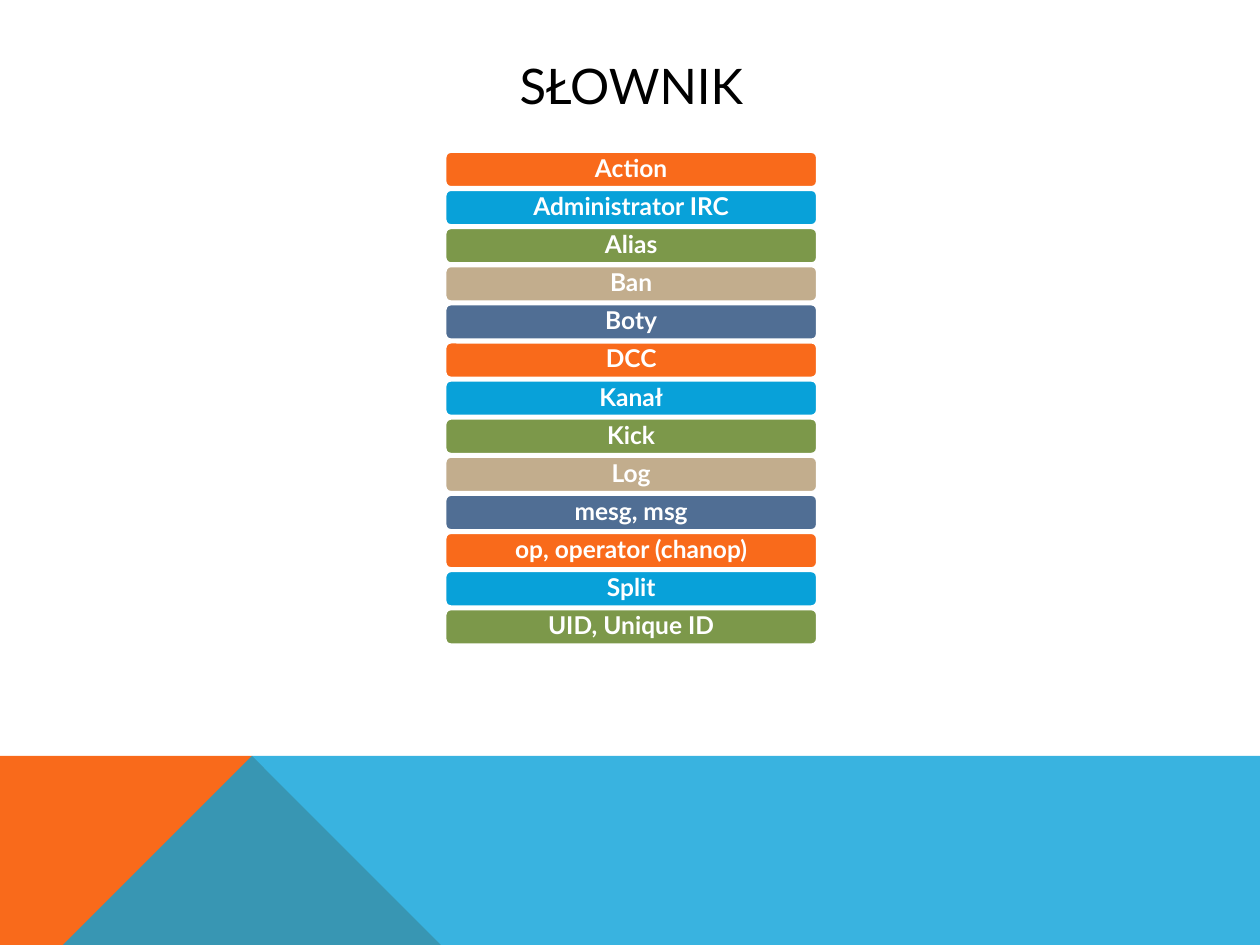
from dataclasses import dataclass

from lxml.etree import SubElement
from pptx import Presentation
from pptx.dml.color import RGBColor
from pptx.enum.shapes import MSO_SHAPE as Preset
from pptx.enum.text import MSO_ANCHOR as Anchor, PP_ALIGN as Align
from pptx.oxml.ns import qn
from pptx.shapes.group import GroupShape
from pptx.slide import Slide
from pptx.text.text import TextFrame
from pptx.util import Inches, Pt

FONT = "Lato"
BLACK = RGBColor(0x00, 0x00, 0x00)
WHITE = RGBColor(0xFF, 0xFF, 0xFF)
ORANGE = RGBColor(0xF9, 0x6A, 0x1B)
BLUE = RGBColor(0x08, 0xA1, 0xD9)
GREEN = RGBColor(0x7C, 0x98, 0x4A)
SAND = RGBColor(0xC2, 0xAD, 0x8D)
SLATE = RGBColor(0x50, 0x6E, 0x94)
BAR_COLORS = (ORANGE, BLUE, GREEN, SAND, SLATE)

WIDTH, HEIGHT = 10, 7.5
BAND_TOP, PEAK = 5.52, 2.23
FIRST_TOP, LAST_TOP = 1.2, 4.83
TERMS = (
    "Action", "Administrator IRC", "Alias", "Ban", "Boty", "DCC", "Kanał",
    "Kick", "Log", "mesg, msg", "op, operator (chanop)", "Split",
    "UID, Unique ID",
)


@dataclass(frozen=True)
class Band:
    points: tuple[tuple[float, float], ...]
    color: RGBColor
    opacity: int = 100


@dataclass(frozen=True)
class Bar:
    term: str
    top: float
    color: RGBColor


BANDS = (
    Band(((0, HEIGHT), (0, BAND_TOP), (PEAK, BAND_TOP), (3.91, HEIGHT)), ORANGE),
    Band(((0, HEIGHT), (PEAK, BAND_TOP), (WIDTH, BAND_TOP), (WIDTH, HEIGHT)), BLUE, 80),
)


def write_text(frame: TextFrame, text: str, size: int, color: RGBColor, bold: bool) -> None:
    frame.word_wrap = True
    frame.vertical_anchor = Anchor.MIDDLE
    para = frame.paragraphs[0]
    para.alignment = Align.CENTER
    para.line_spacing = 0.9
    span = para.add_run()
    span.text = text
    span.font.name = FONT
    span.font.size = Pt(size)
    span.font.bold = bold
    span.font.color.rgb = color


def draw_band(page: Slide, band: Band) -> None:
    start, *others = band.points
    builder = page.shapes.build_freeform(*start, scale=Inches(1))
    builder.add_line_segments(others, close=True)
    shape = builder.convert_to_shape()
    shape.shadow.inherit = False
    shape.fill.solid()
    shape.fill.fore_color.rgb = band.color
    shape.line.fill.background()
    if band.opacity < 100:
        color = shape.element.spPr.find(qn("a:solidFill")).find(qn("a:srgbClr"))
        SubElement(color, qn("a:alpha"), val=str(band.opacity * 1000))


def draw_bar(group: GroupShape, bar: Bar) -> None:
    box = group.shapes.add_shape(
        Preset.ROUNDED_RECTANGLE, Inches(3.53), Inches(bar.top), Inches(2.96), Inches(0.29)
    )
    box.shadow.inherit = False
    box.fill.solid()
    box.fill.fore_color.rgb = bar.color
    box.line.color.rgb = WHITE
    box.line.width = Pt(2)
    frame = box.text_frame
    frame.margin_left = frame.margin_right = Inches(0.06)
    frame.margin_top = frame.margin_bottom = Inches(0.03)
    write_text(frame, bar.term, 14, WHITE, True)


def main() -> None:
    deck = Presentation()
    deck.slide_width, deck.slide_height = Inches(WIDTH), Inches(HEIGHT)
    page = deck.slides.add_slide(deck.slide_layouts[5])

    for band in BANDS:
        draw_band(page, band)

    title = page.shapes.title
    title.left, title.top = Inches(0.9), Inches(0.4)
    title.width, title.height = Inches(8.22), Inches(0.6)
    write_text(title.text_frame, "SŁOWNIK", 28, BLACK, False)

    pitch = (LAST_TOP - FIRST_TOP) / (len(TERMS) - 1)
    glossary = page.shapes.add_group_shape()
    for index, term in enumerate(TERMS):
        color = BAR_COLORS[index % len(BAR_COLORS)]
        draw_bar(glossary, Bar(term, FIRST_TOP + index * pitch, color))

    deck.save("out.pptx")


if __name__ == "__main__":
    main()
